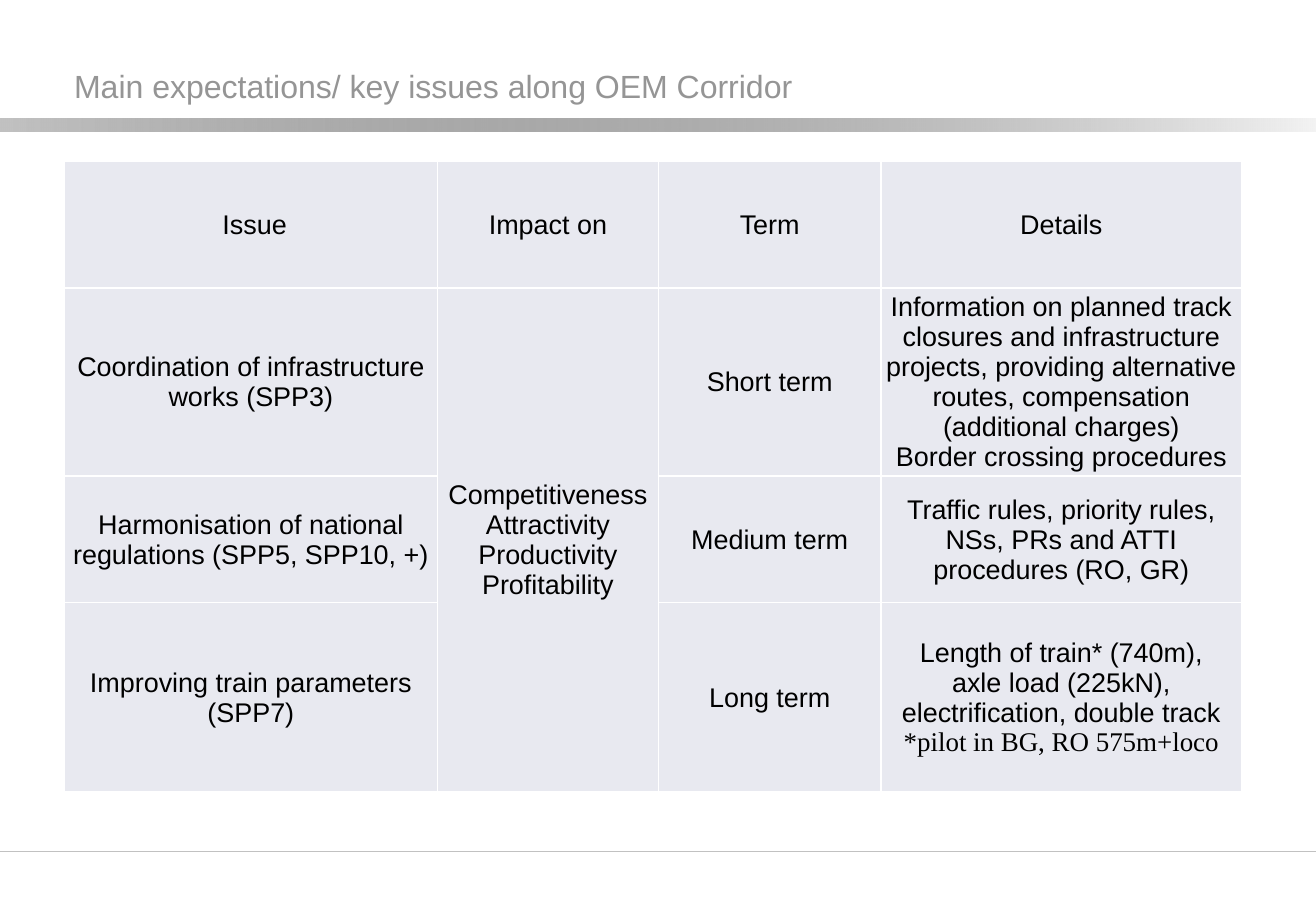
import pptx
import pptx.dml.color
import pptx.enum.shapes
import pptx.enum.text
import pptx.oxml
import pptx.oxml.ns
import pptx.util

Inches = pptx.util.Inches
Pt = pptx.util.Pt


def color(hex_code):
    return pptx.dml.color.RGBColor.from_string(hex_code)


def add_cell_borders(cell, hex_code, points):
    properties = cell._tc.get_or_add_tcPr()
    for side in ("lnL", "lnR", "lnT", "lnB"):
        properties.append(pptx.oxml.parse_xml(
            f'<a:{side} {pptx.oxml.ns.nsdecls("a")} w="{Pt(points)}"><a:solidFill>'
            f'<a:srgbClr val="{hex_code}"/></a:solidFill></a:{side}>'))


deck = pptx.Presentation()
deck.slide_width = Inches(10.83)
deck.slide_height = Inches(7.5)
slide = deck.slides.add_slide(deck.slide_layouts[5])

# Header band, fading to the right
band = slide.shapes.add_shape(
    pptx.enum.shapes.MSO_SHAPE.RECTANGLE, 0, Inches(0.98), deck.slide_width, Inches(0.1))
band.shadow.inherit = False
band.line.fill.background()
band.fill.gradient()
band.fill.gradient_angle = 0
start, end = band.fill.gradient_stops
start.position, end.position = 0, 1
start.color.rgb = color("C1C1C1")
end.color.rgb = color("000000")
end_color = band._element.spPr.findall(".//" + pptx.oxml.ns.qn("a:srgbClr"))[-1]
end_color.append(pptx.oxml.parse_xml(
    f'<a:alpha {pptx.oxml.ns.nsdecls("a")} val="5000"/>'))

# Footer line
footer_line = slide.shapes.add_connector(
    pptx.enum.shapes.MSO_CONNECTOR.STRAIGHT, 0, Inches(7.01), deck.slide_width, Inches(7.01))
footer_line.line.color.rgb = color("C1C1C1")
footer_line.line.width = Pt(1)
footer_line._element.spPr.append(pptx.oxml.parse_xml(
    f'<a:effectLst {pptx.oxml.ns.nsdecls("a")}/>'))

# Title
title = slide.shapes.title
title.left, title.top = Inches(0.61), Inches(0.29)
title.width, title.height = Inches(6.41), Inches(0.57)
frame = title.text_frame
frame.text = "Main expectations/ key issues along OEM Corridor"
frame.word_wrap = True
frame.auto_size = pptx.enum.text.MSO_AUTO_SIZE.NONE
frame.vertical_anchor = pptx.enum.text.MSO_ANCHOR.BOTTOM
frame.margin_left = frame.margin_right = frame.margin_top = frame.margin_bottom = 0
para = frame.paragraphs[0]
para.alignment = pptx.enum.text.PP_ALIGN.LEFT
para.font.name = "Arial"
para.font.size = Pt(19)
para.font.color.rgb = color("959595")

# Issue table: \n starts a paragraph, \v breaks a line
column_widths = [3.07, 1.82, 1.83, 2.97]
row_heights = [1.04, 1.55, 1.04, 1.56]
rows = [
    [" Issue", "Impact on", "Term", "Details"],
    ["Coordination of infrastructure works (SPP3)",
     "Competitiveness\nAttractivity\nProductivity\nProfitability",
     "Short term",
     "Information on planned track closures and infrastructure projects, "
     "providing alternative routes, compensation (additional charges)\n"
     "Border crossing procedures"],
    ["Harmonisation of national regulations (SPP5, SPP10, +)", "", "Medium term",
     "Traffic rules, priority rules,\vNSs, PRs and ATTI procedures (RO, GR)"],
    ["Improving train parameters (SPP7)", "", "Long term",
     "Length of train* (740m),\vaxle load (225kN), electrification, double track\n"
     "*pilot in BG, RO 575m+loco"],
]
table = slide.shapes.add_table(
    len(rows), len(column_widths), Inches(0.53), Inches(1.33),
    Inches(sum(column_widths)), Inches(sum(row_heights))).table
table.first_row = False
table.horz_banding = False
for column, width in zip(table.columns, column_widths):
    column.width = Inches(width)
for row, height in zip(table.rows, row_heights):
    row.height = Inches(height)
table.cell(1, 1).merge(table.cell(3, 1))

for row, texts in zip(table.rows, rows):
    for cell, text in zip(row.cells, texts):
        add_cell_borders(cell, "FFFFFF", 1)
        cell.fill.solid()
        cell.fill.fore_color.rgb = color("E8E9F0")
        cell.vertical_anchor = pptx.enum.text.MSO_ANCHOR.MIDDLE
        cell.margin_left = cell.margin_right = cell.margin_top = Inches(0.01)
        cell.margin_bottom = 0
        cell.text_frame.text = text
        for para in cell.text_frame.paragraphs:
            para.alignment = pptx.enum.text.PP_ALIGN.CENTER
            para.font.name = "Times New Roman" if para.text.startswith("*") else "Arial"
            para.font.size = Pt(16)
            para.font.color.rgb = color("000000")

deck.save("out.pptx")
